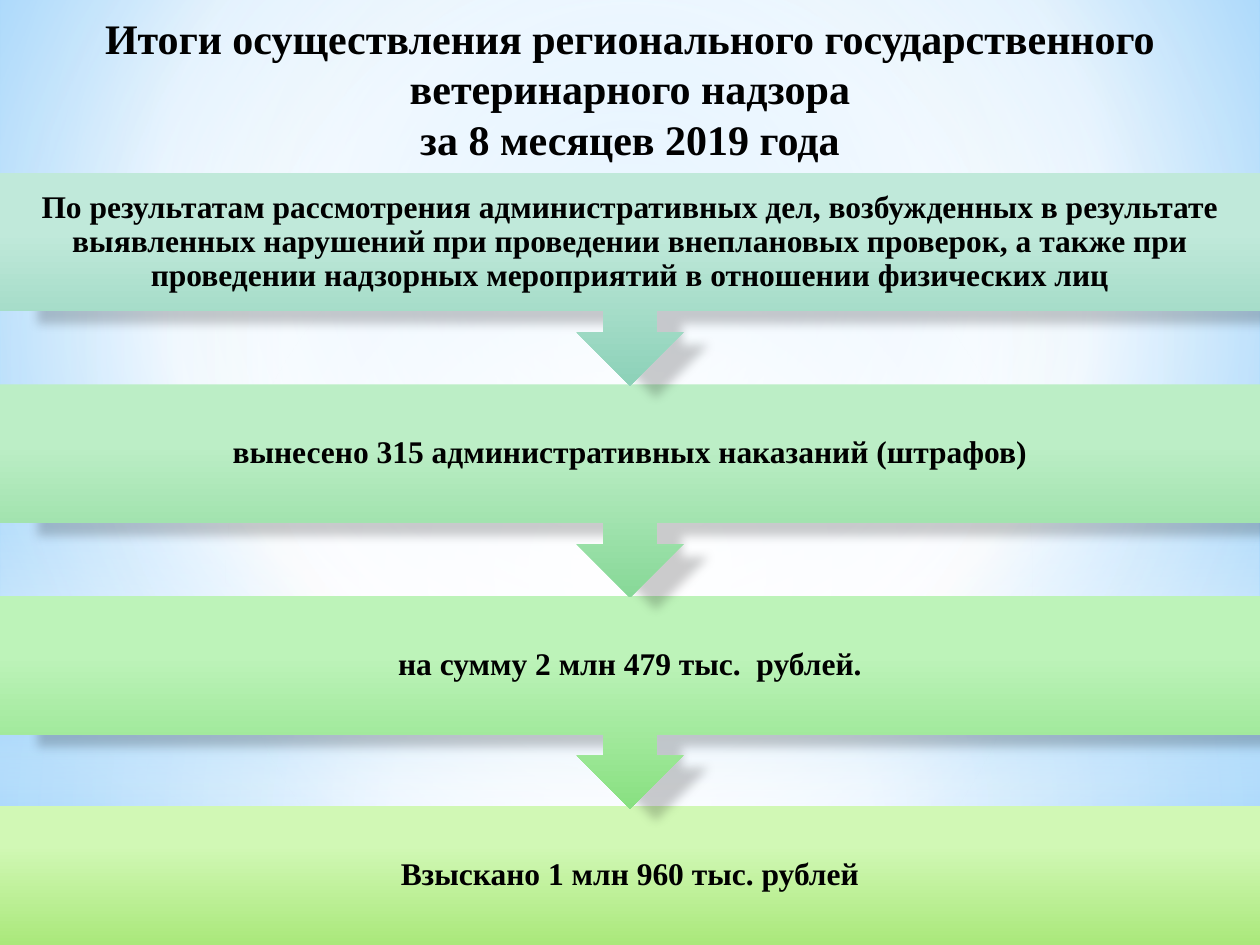
"""Build a slide with the results of regional veterinary supervision."""
from pptx import Presentation, oxml, util as u
from pptx.dml.color import RGBColor
from pptx.enum import shapes, text
from pptx.oxml.ns import nsdecls, qn

FONT = "Times New Roman"
COLOURS = {"text": "000000", "white": "FFFFFF", "haze": "B4DCFA", "sky": "9ED5FF", "blue": "5BB9FF"}
TITLE = ["Итоги осуществления регионального государственного ветеринарного надзора",
         "за 8 месяцев 2019 года"]
STEPS = [
    ("По результатам рассмотрения административных дел, возбужденных в результате выявленных "
     "нарушений при проведении внеплановых проверок, а также при проведении надзорных "
     "мероприятий в отношении физических лиц", "C0E9DA", "8CD1B8"),
    ("вынесено 315 административных наказаний (штрафов)", "BCEEC6", "87D897"),
    ("на сумму 2 млн 479 тыс.  рублей.", "BDF3B9", "88E081"),
    ("Взыскано 1 млн 960 тыс. рублей", "D1F8B5", "AAE87B"),
]
WHITE, HAZE = COLOURS["white"], COLOURS["haze"]
BACKGROUND = [(0, COLOURS["sky"], 100), (60, WHITE, 100), (100, COLOURS["blue"], 100)]
CENTRE = (50, 50, 50, 50)
PANELS = [
    ("RECTANGLE", 5.58, 1.92, [(0, WHITE, 91), (37, WHITE, 76), (100, HAZE, 79)], CENTRE),
    ("RECTANGLE", 0, 5.58, [(0, WHITE, 89), (48, WHITE, 62), (100, HAZE, 79)], CENTRE),
    ("RECTANGLE", 4.12, 2.5, [(0, WHITE, 0), (29, WHITE, 30), (45, HAZE, 40), (55, WHITE, 26),
                              (65, HAZE, 60), (100, WHITE, 0)], None),
    ("OVAL", 1.75, 5.58, [(0, WHITE, 100), (56, WHITE, 0)], CENTRE),
]
WIDTH, HEIGHT = 10, 7.5
BAR_TOP, BAR_STEP, BAR_HEIGHT, CALLOUT_HEIGHT = 1.37, 1.68, 1.1, 1.69


def set_gradient(parent, stops, focus=None):
    """Replace the solid fill in parent by a circular or downward gradient."""
    marks = "".join(
        f'<a:gs pos="{place * 1000}"><a:srgbClr val="{colour}">'
        f'<a:alpha val="{opacity * 1000}"/></a:srgbClr></a:gs>'
        for place, colour, opacity in stops)
    if focus:
        sides = " ".join(f'{side}="{value * 1000}"' for side, value in zip("ltrb", focus))
        course = f'<a:path path="circle"><a:fillToRect {sides}/></a:path>'
    else:
        course = '<a:lin ang="5400000" scaled="0"/>'
    gradient = oxml.parse_xml(f'<a:gradFill {nsdecls("a")} rotWithShape="0">'
                              f'<a:gsLst>{marks}</a:gsLst>{course}</a:gradFill>')
    parent.replace(parent.find(qn("a:solidFill")), gradient)


def add_panel(owner, kind, top, height, stops, focus=None):
    """Add a full-width shape with a gradient fill."""
    panel = owner.add_shape(getattr(shapes.MSO_SHAPE, kind), 0, u.Inches(top),
                            u.Inches(WIDTH), u.Inches(height))
    panel.shadow.inherit = False
    panel.line.fill.background()
    panel.fill.solid()
    set_gradient(panel.element.spPr, stops, focus)
    return panel


def add_shadow(panel):
    """Give a panel a soft shadow below it."""
    panel.element.spPr.find(qn("a:effectLst")).append(oxml.parse_xml(
        f'<a:outerShdw {nsdecls("a")} blurRad="63500" dist="50800" dir="5400000" '
        'sx="98000" sy="98000" rotWithShape="0"><a:srgbClr val="000000">'
        '<a:alpha val="20000"/></a:srgbClr></a:outerShdw>'))


def add_label(owner, top, height, lines, size):
    """Add a full-width text box with centred bold lines."""
    box = owner.add_textbox(0, u.Inches(top), u.Inches(WIDTH), u.Inches(height))
    frame = box.text_frame
    frame.word_wrap = True
    frame.text = "\n".join(lines)
    for para in frame.paragraphs:
        para.alignment = text.PP_ALIGN.CENTER
        for span in para.runs:
            span.font.name, span.font.size, span.font.bold = FONT, u.Pt(size), True
            span.font.color.rgb = RGBColor.from_string(COLOURS["text"])
    return frame


def add_step(owner, index, wording, light, dark):
    """Add one bar of the process, with an arrow unless it is the last."""
    top = BAR_TOP + index * BAR_STEP
    stops = [(28, light, 100), (100, dark, 100)]
    if index == len(STEPS) - 1:
        top = HEIGHT - BAR_HEIGHT
        bar = add_panel(owner, "RECTANGLE", top, BAR_HEIGHT, stops)
    else:
        bar = add_panel(owner, "UP_ARROW_CALLOUT", top, CALLOUT_HEIGHT, stops)
        bar.rotation = 180
    add_shadow(bar)
    frame = add_label(owner, top, BAR_HEIGHT, [wording], 18)
    frame.vertical_anchor = text.MSO_ANCHOR.MIDDLE
    frame.margin_left = frame.margin_right = u.Inches(0.14)
    frame.margin_top = frame.margin_bottom = u.Inches(0.14)
    frame.paragraphs[0].line_spacing = 0.9


def main():
    """Build and save the deck."""
    deck = Presentation()
    deck.slide_width, deck.slide_height = u.Inches(WIDTH), u.Inches(HEIGHT)
    page = deck.slides.add_slide(deck.slide_layouts[6])
    page.background.fill.solid()
    set_gradient(page.element.find(".//" + qn("p:bgPr")), BACKGROUND, (20, 10, 20, 60))
    for panel in PANELS:
        add_panel(page.shapes, *panel)
    add_label(page.shapes, 0.05, 1.31, TITLE, 24)
    process = page.shapes.add_group_shape().shapes
    for index, step in reversed(list(enumerate(STEPS))):
        add_step(process, index, *step)
    deck.save("out.pptx")


if __name__ == "__main__":
    main()
